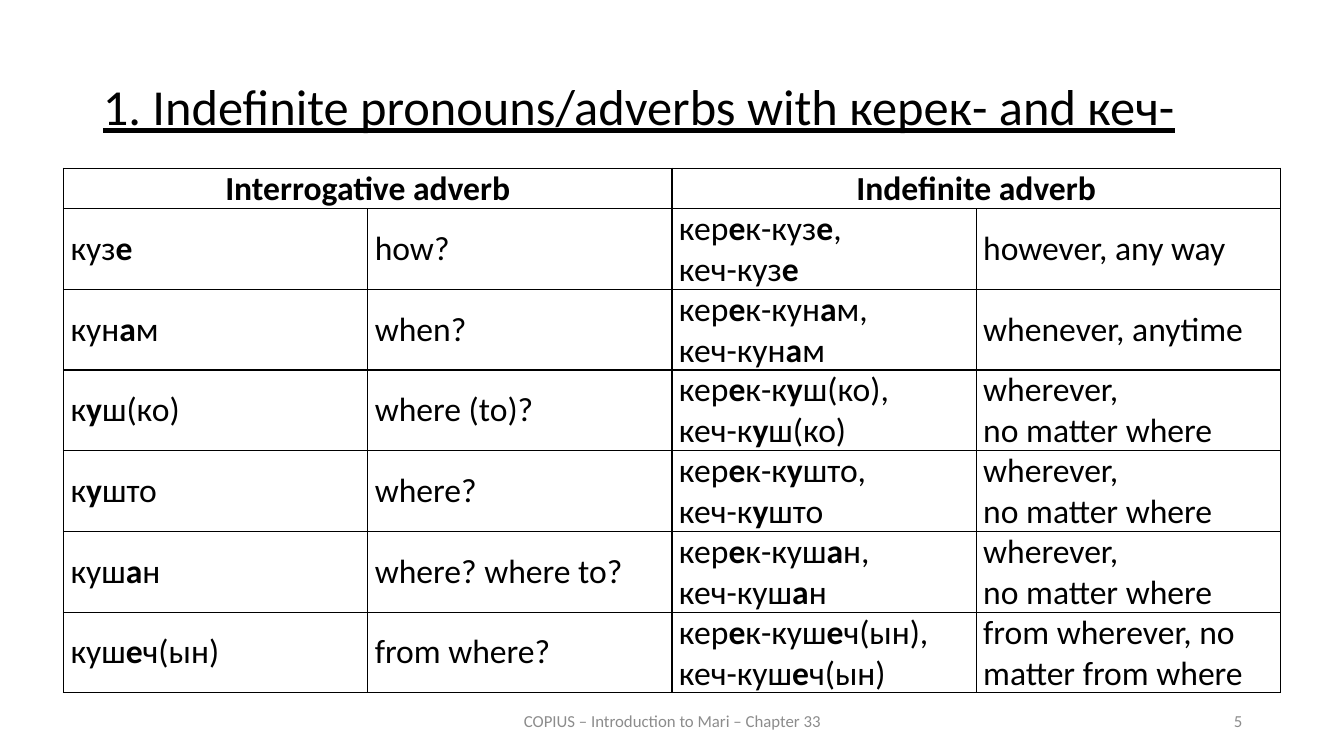
from lxml import etree
from pptx import Presentation
from pptx import util as u
from pptx.dml.color import RGBColor
from pptx.enum import text
from pptx.oxml import ns

COLORS = {"ink": "000000", "muted": "8C8C8C"}
FONT = "Calibri"
ADVERBS = [
    ("куз*е*", "how?", "however, any way"),
    ("кун*а*м", "when?", "whenever, anytime"),
    ("к*у*ш(ко)", "where (to)?", "wherever,\nno matter where"),
    ("к*у*што", "where?", "wherever,\nno matter where"),
    ("куш*а*н", "where? where to?", "wherever,\nno matter where"),
    ("куш*е*ч(ын)", "from where?", "from wherever, no matter from where"),
]


class SlideBuilder:
    """Holds the style and the current slide."""

    def __init__(self, prs):
        self.slide = prs.slides.add_slide(prs.slide_layouts[5])

    def add_text(self, tf, content, size, color="ink", para=None, **font):
        """Add lines of text, with *stress* marks set in bold."""
        for i, line in enumerate(content.split("\n")):
            p = tf.paragraphs[0] if i == 0 else tf.add_paragraph()
            for name, value in (para or {}).items():
                setattr(p, name, value)
            for j, part in enumerate(line.split("*")):
                if not part:
                    continue
                r = p.add_run()
                r.text = part
                r.font.color.rgb = RGBColor.from_string(COLORS[color])
                style = {"name": FONT, "size": u.Pt(size), "bold": j % 2 == 1, **font}
                for name, value in style.items():
                    setattr(r.font, name, value)

    def place(self, sp, *box):
        """Set left, top, width and height in inches."""
        for name, value in zip(("left", "top", "width", "height"), box):
            setattr(sp, name, u.Inches(value))

    def title(self, content, *box):
        """Format the title placeholder."""
        sp = self.slide.shapes.title
        self.place(sp, *box)
        tf = sp.text_frame
        tf.auto_size = text.MSO_AUTO_SIZE.NONE
        tf.vertical_anchor = text.MSO_ANCHOR.TOP
        para = {"alignment": text.PP_ALIGN.JUSTIFY, "line_spacing": 0.9,
                "space_before": u.Pt(12)}
        self.add_text(tf, content, 36, para=para, underline=True)

    def footer(self, content, align, *box):
        """Add a small grey line at the foot of the slide."""
        sp = self.slide.shapes.add_textbox(*map(u.Inches, box))
        tf = sp.text_frame
        tf.word_wrap = True
        tf.vertical_anchor = text.MSO_ANCHOR.MIDDLE
        self.add_text(tf, content, 12, "muted", {"alignment": align})

    def border(self, cell):
        """Draw thin lines on all four sides of a cell."""
        tc_pr = cell._tc.get_or_add_tcPr()
        for side in ("lnL", "lnR", "lnT", "lnB"):
            ln = etree.SubElement(tc_pr, ns.qn(f"a:{side}"), w=str(u.Pt(1)))
            fill = etree.SubElement(ln, ns.qn("a:solidFill"))
            etree.SubElement(fill, ns.qn("a:srgbClr"), val=COLORS["ink"])

    def cell(self, cell, content, para=None, **font):
        """Format and fill one table cell."""
        style = {"margin_left": u.Inches(0.07), "margin_right": u.Inches(0.07),
                 "margin_top": 0, "margin_bottom": 0,
                 "vertical_anchor": text.MSO_ANCHOR.MIDDLE}
        for name, value in style.items():
            setattr(cell, name, value)
        self.border(cell)
        cell.fill.background()
        if content:
            self.add_text(cell.text_frame, content, 24, para=para, **font)

    def table(self, headings, rows, left, top, width, line):
        """Add a table whose headings each span two columns."""
        cols = 2 * len(headings)
        height = line * (1 + 2 * len(rows))
        box = map(u.Inches, (left, top, width, height))
        tbl = self.slide.shapes.add_table(len(rows) + 1, cols, *box).table
        tbl.first_row = tbl.horz_banding = False
        for i, row in enumerate(tbl.rows):
            row.height = u.Inches(line if i == 0 else 2 * line)
        centred = {"alignment": text.PP_ALIGN.CENTER}
        for i, heading in enumerate(headings):
            first, second = tbl.cell(0, 2 * i), tbl.cell(0, 2 * i + 1)
            first.merge(second)
            self.cell(first, heading, centred, bold=True)
            self.cell(second, "")
        for i, row in enumerate(rows, 1):
            for j, content in enumerate(row):
                self.cell(tbl.cell(i, j), content)


def main():
    """Build and save the slide."""
    prs = Presentation()
    prs.slide_width, prs.slide_height = u.Inches(13.33), u.Inches(7.5)
    s = SlideBuilder(prs)
    s.title("1. Indefinite pronouns/adverbs with керек- and кеч-", 0.92, 0.76, 11.5, 0.83)
    s.footer("COPIUS – Introduction to Mari – Chapter 33", text.PP_ALIGN.CENTER,
             4.42, 6.95, 4.5, 0.4)
    s.footer("5", text.PP_ALIGN.RIGHT, 9.42, 6.95, 3, 0.4)
    rows = [(word, question, f"кер*е*к-{word},\nкеч-{word}", meaning)
            for word, question, meaning in ADVERBS]
    s.table(("Interrogative adverb", "Indefinite adverb"), rows, 0.63, 1.67, 12.07, 0.4)
    prs.save("out.pptx")


if __name__ == "__main__":
    main()
